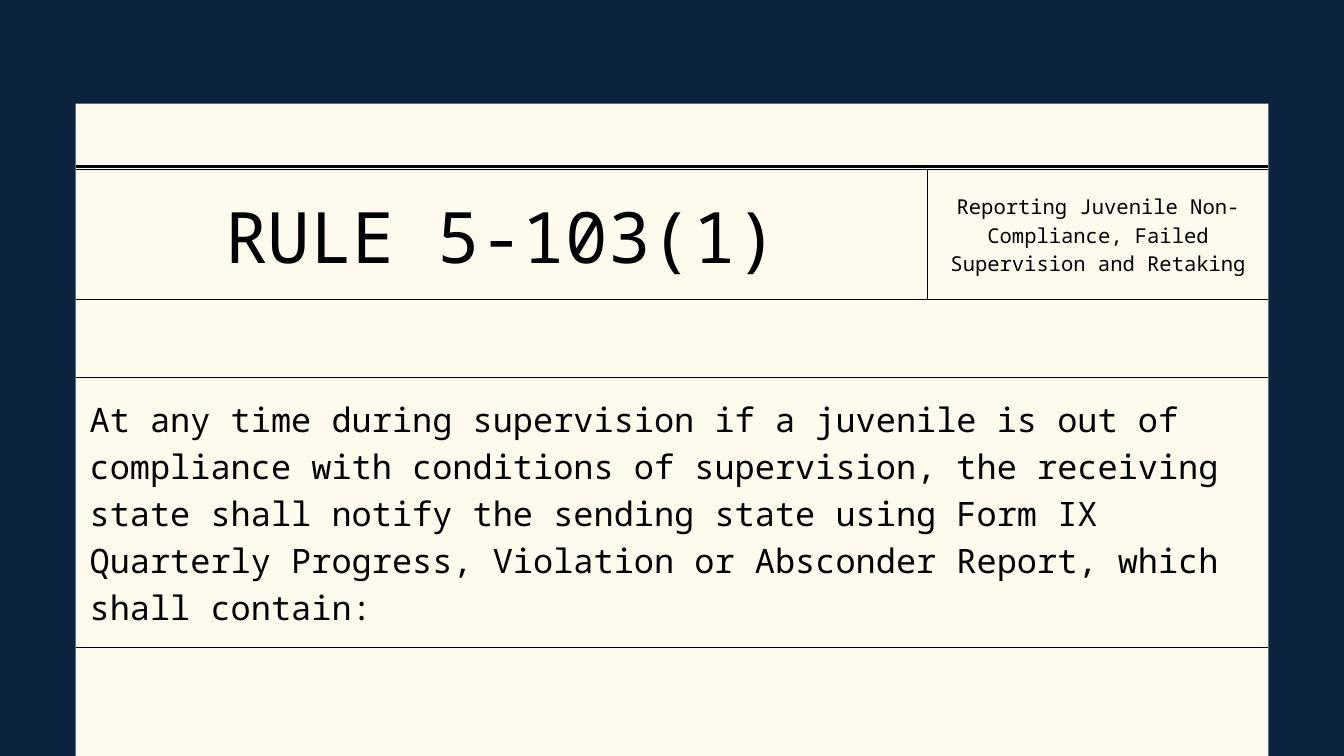
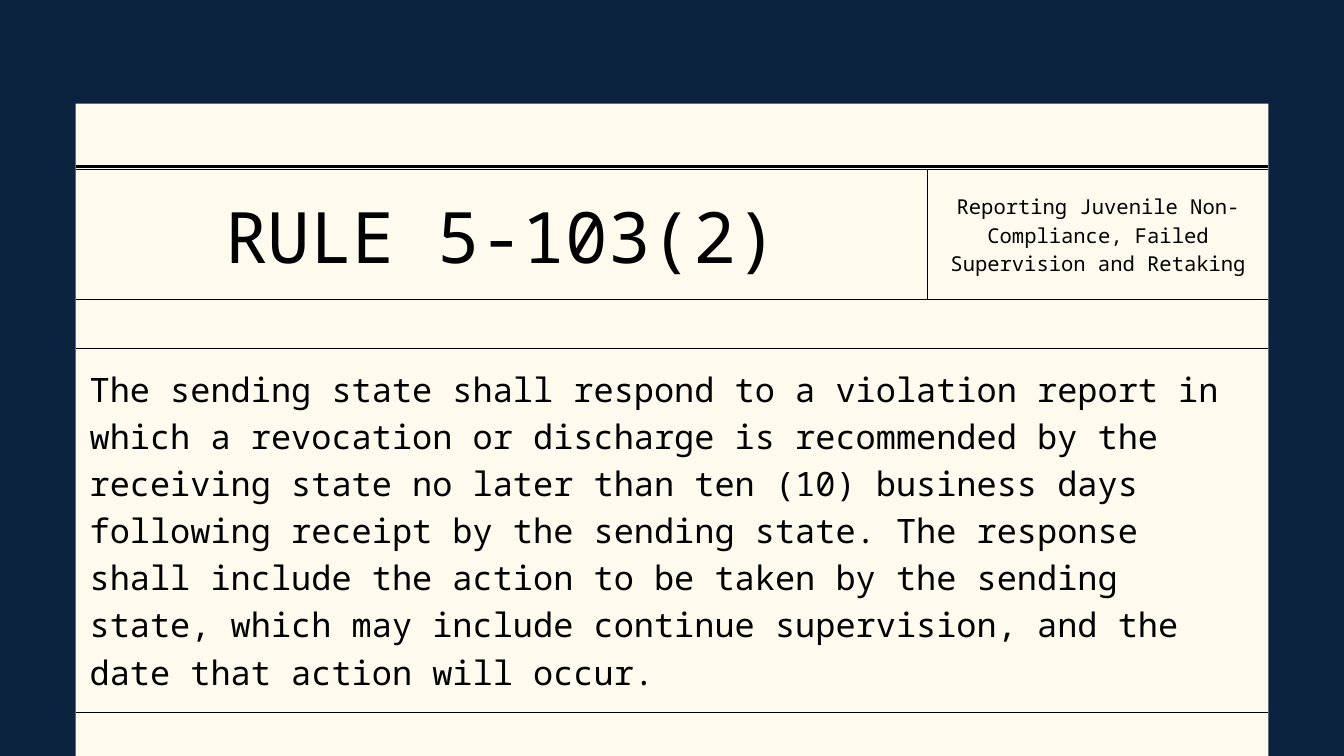
from lxml import etree
from pptx import Presentation
from pptx.dml.color import RGBColor
from pptx.enum.shapes import MSO_CONNECTOR, MSO_SHAPE
from pptx.enum.text import MSO_ANCHOR, PP_ALIGN
from pptx.oxml.ns import qn
from pptx.util import Pt

RECTANGLE = MSO_SHAPE.RECTANGLE
STRAIGHT = MSO_CONNECTOR.STRAIGHT
MIDDLE = MSO_ANCHOR.MIDDLE
LEFT, CENTER = PP_ALIGN.LEFT, PP_ALIGN.CENTER

COLORS = {"navy": "0C2340", "cream": "FFFAEE", "ink": "000000"}
FONT = "Noto Sans Mono"
LINE_SPACING = 1.4
MARGIN = 15
BORDER = 1.5

SLIDE_WIDTH, SLIDE_HEIGHT = 1440, 810
PANEL_LEFT, PANEL_TOP, PANEL_WIDTH = 81, 111, 1278
PANEL_RIGHT = PANEL_LEFT + PANEL_WIDTH
RULE_TOP = 178.5
HEADER_TOP, HEADER_HEIGHT = 182, 139
HEADER_COLUMNS = [913, 365]
SUBJECT = "Reporting Juvenile Non-Compliance, Failed Supervision and Retaking"

RULES = [
    ("RULE 5-103(1)", 404.6, 289.4,
     "At any time during supervision if a juvenile is out of compliance with "
     "conditions of supervision, the receiving state shall notify the sending "
     "state using Form IX Quarterly Progress, Violation or Absconder Report, "
     "which shall contain:"),
    ("RULE 5-103(2)", 373, 390.2,
     "The sending state shall respond to a violation report in which a "
     "revocation or discharge is recommended by the receiving state no later "
     "than ten (10) business days following receipt by the sending state. The "
     "response shall include the action to be taken by the sending state, which "
     "may include continue supervision, and the date that action will occur."),
]


def set_borders(cell, drawn_sides):
    properties = cell._tc.get_or_add_tcPr()
    for position, side in enumerate("LRTB"):
        border = etree.Element(qn(f"a:ln{side}"))
        if side in drawn_sides:
            border.set("w", str(Pt(BORDER)))
            fill = etree.SubElement(border, qn("a:solidFill"))
            etree.SubElement(fill, qn("a:srgbClr"), val=COLORS["ink"])
        else:
            border.set("w", "0")
            etree.SubElement(border, qn("a:noFill"))
        properties.insert(position, border)


def add_row(page, top, height, columns, entries):
    frame = page.shapes.add_table(
        1, len(columns), Pt(PANEL_LEFT), Pt(top), Pt(PANEL_WIDTH), Pt(height))
    table = frame.table
    table.first_row = False
    table.horz_banding = False
    table.rows[0].height = Pt(height)
    for index, (text, size, alignment, drawn_sides) in enumerate(entries):
        table.columns[index].width = Pt(columns[index])
        cell = table.cell(0, index)
        cell.fill.background()
        cell.vertical_anchor = MIDDLE
        cell.margin_left = cell.margin_right = Pt(MARGIN)
        cell.margin_top = cell.margin_bottom = Pt(MARGIN)
        set_borders(cell, drawn_sides)
        para = cell.text_frame.paragraphs[0]
        para.alignment = alignment
        para.line_spacing = Pt(size * LINE_SPACING)
        span = para.add_run()
        span.text = text
        span.font.name = FONT
        span.font.size = Pt(size)
        span.font.color.rgb = RGBColor.from_string(COLORS["ink"])


deck = Presentation()
deck.slide_width = Pt(SLIDE_WIDTH)
deck.slide_height = Pt(SLIDE_HEIGHT)
blank = deck.slide_layouts[6]

for title, body_top, body_height, body in RULES:
    page = deck.slides.add_slide(blank)
    page.background.fill.solid()
    page.background.fill.fore_color.rgb = RGBColor.from_string(COLORS["navy"])

    panel = page.shapes.add_shape(
        RECTANGLE, Pt(PANEL_LEFT), Pt(PANEL_TOP),
        Pt(PANEL_WIDTH), Pt(SLIDE_HEIGHT - PANEL_TOP))
    panel.shadow.inherit = False
    panel.fill.solid()
    panel.fill.fore_color.rgb = RGBColor.from_string(COLORS["cream"])
    panel.line.fill.background()

    top_rule = page.shapes.add_connector(
        STRAIGHT, Pt(PANEL_LEFT), Pt(RULE_TOP), Pt(PANEL_RIGHT), Pt(RULE_TOP))
    top_rule.line.width = Pt(3.75)
    top_rule.line.color.rgb = RGBColor.from_string(COLORS["ink"])
    etree.SubElement(top_rule._element.spPr, qn("a:effectLst"))

    add_row(page, HEADER_TOP, HEADER_HEIGHT, HEADER_COLUMNS,
            [(title, 76, CENTER, "RTB"), (SUBJECT, 22, CENTER, "LTB")])
    add_row(page, body_top, body_height, [PANEL_WIDTH],
            [(body, 36, LEFT, "TB")])

deck.save("out.pptx")
